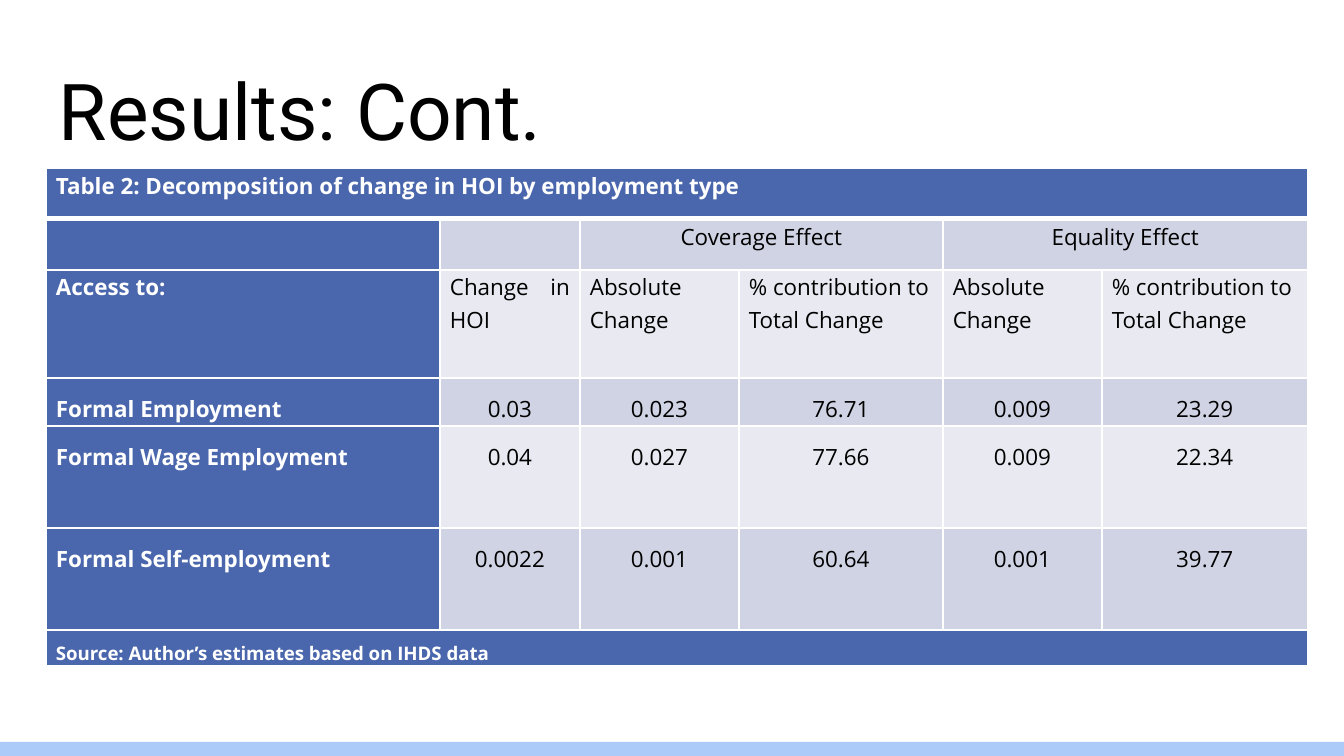
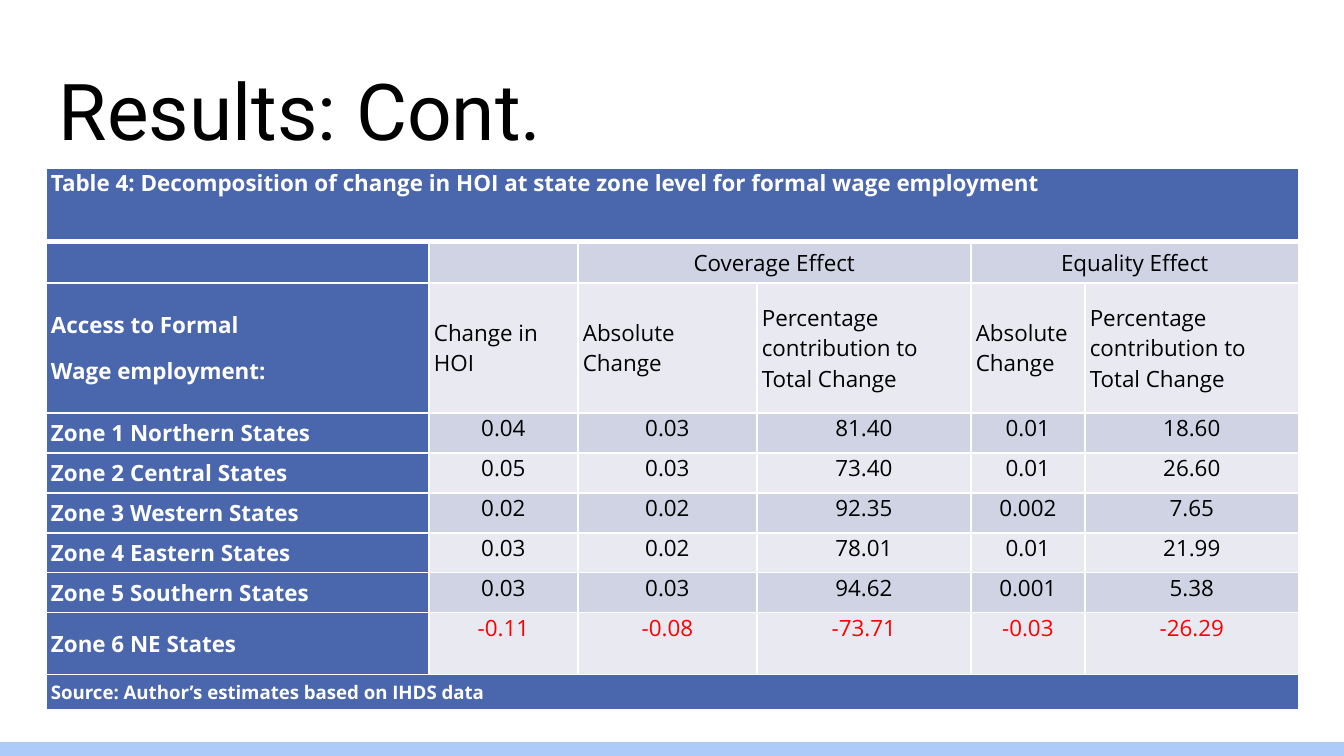
from dataclasses import dataclass

import lxml.etree
import pptx
import pptx.dml.color
import pptx.enum.shapes
import pptx.enum.text
import pptx.oxml.ns
import pptx.presentation
import pptx.slide
import pptx.table
import pptx.text.text
import pptx.util

ALIGN = pptx.enum.text.PP_ALIGN
ANCHOR = pptx.enum.text.MSO_ANCHOR

SLIDE_WIDTH, SLIDE_HEIGHT = 1344, 756
EMU_PER_PX = 9144000 / SLIDE_WIDTH
TABLE_LEFT, TABLE_TOP = 46, 168

BLUE, BAND = "4A66AC", "ACCBF9"
STRIPES = ("D0D3E3", "E9EAF1")
WHITE, BLACK, RED = "FFFFFF", "000000", "FF0000"
TITLE_FONT, TABLE_FONT = "Roboto", "Open Sans"

TITLE = "Results: Cont."
EFFECTS = ("", "", "Coverage Effect", "", "Equality Effect", "")
SOURCE = "Source: Author’s estimates based on IHDS data"


@dataclass(frozen=True)
class Decomposition:
    caption: str
    access: str
    share: str
    records: tuple[tuple[str, ...], ...]
    widths: tuple[int, ...]
    heights: tuple[int, ...]
    side_margin: int
    head_spacing: float
    record_spacing: float
    head_anchor: ANCHOR
    source_anchor: ANCHOR
    justified_heads: int  # leading column heads set justified

    def rows(self) -> list[tuple[str, ...]]:
        blank = ("",) * (len(self.widths) - 1)
        effect_heads = ("Absolute Change", self.share)
        return [
            (self.caption, *blank),
            EFFECTS,
            (self.access, "Change in HOI", *effect_heads * 2),
            *self.records,
            (SOURCE, *blank),
        ]


EMPLOYMENT = Decomposition(
    caption="Table 2: Decomposition of change in HOI by employment type",
    access="Access to:",
    share="% contribution to Total Change",
    records=(
        ("Formal Employment", "0.03", "0.023", "76.71", "0.009", "23.29"),
        ("Formal Wage Employment", "0.04", "0.027", "77.66", "0.009", "22.34"),
        ("Formal Self-employment", "0.0022", "0.001", "60.64", "0.001", "39.77"),
    ),
    widths=(394, 140, 159, 204, 159, 206),
    heights=(51, 51, 108, 48, 102, 102, 36),
    side_margin=10,
    head_spacing=1.07,
    record_spacing=1.5,
    head_anchor=ANCHOR.TOP,
    source_anchor=ANCHOR.BOTTOM,
    justified_heads=2,
)

ZONES = Decomposition(
    caption="Table 4: Decomposition of change in HOI at state zone level "
            "for formal wage employment",
    access="Access to Formal\nWage employment:",
    share="Percentage contribution to Total Change",
    records=(
        ("Zone 1 Northern States", "0.04", "0.03", "81.40", "0.01", "18.60"),
        ("Zone 2 Central States", "0.05", "0.03", "73.40", "0.01", "26.60"),
        ("Zone 3 Western States", "0.02", "0.02", "92.35", "0.002", "7.65"),
        ("Zone 4 Eastern States", "0.03", "0.02", "78.01", "0.01", "21.99"),
        ("Zone 5 Southern States", "0.03", "0.03", "94.62", "0.001", "5.38"),
        ("Zone 6 NE States", "-0.11", "-0.08", "-73.71", "-0.03", "-26.29"),
    ),
    widths=(383, 149, 179, 214, 114, 214),
    heights=(74, 41, 130, *(40,) * 5, 62, 35),
    side_margin=5,
    head_spacing=1.0,
    record_spacing=1.0,
    head_anchor=ANCHOR.MIDDLE,
    source_anchor=ANCHOR.MIDDLE,
    justified_heads=0,
)


def px(length: int) -> pptx.util.Emu:
    return pptx.util.Emu(round(length * EMU_PER_PX))


def color(value: str) -> pptx.dml.color.RGBColor:
    return pptx.dml.color.RGBColor.from_string(value)


def add_run(paragraph: pptx.text.text._Paragraph, text: str, font: str,
            size: int, ink: str, bold: bool = False) -> None:
    run = paragraph.add_run()
    run.text = text
    run.font.name = font
    run.font.size = pptx.util.Pt(size)
    run.font.bold = bold
    run.font.color.rgb = color(ink)


def add_band(slide: pptx.slide.Slide) -> None:
    height = 14
    band = slide.shapes.add_shape(
        pptx.enum.shapes.MSO_SHAPE.RECTANGLE,
        0, px(SLIDE_HEIGHT - height), px(SLIDE_WIDTH), px(height))
    band.shadow.inherit = False
    band.fill.solid()
    band.fill.fore_color.rgb = color(BAND)
    band.line.fill.background()


def set_title(slide: pptx.slide.Slide) -> None:
    title = slide.shapes.title
    title.left, title.top = px(TABLE_LEFT), px(47)
    title.width, title.height = px(1253), px(122)
    frame = title.text_frame
    frame.auto_size = pptx.enum.text.MSO_AUTO_SIZE.NONE
    frame.vertical_anchor = ANCHOR.BOTTOM
    frame.margin_left = frame.margin_right = px(13)
    frame.margin_top = frame.margin_bottom = px(13)
    paragraph = frame.paragraphs[0]
    paragraph.alignment = ALIGN.LEFT
    add_run(paragraph, TITLE, TITLE_FONT, 42, BLACK)


def add_borders(cell: pptx.table._Cell, top: int, bottom: int) -> None:
    """Draw white borders; must run before the cell gets its fill."""
    properties = cell._tc.get_or_add_tcPr()
    for side, points in (("L", 1), ("R", 1), ("T", top), ("B", bottom)):
        line = lxml.etree.SubElement(
            properties, pptx.oxml.ns.qn(f"a:ln{side}"), w=str(pptx.util.Pt(points)))
        fill = lxml.etree.SubElement(line, pptx.oxml.ns.qn("a:solidFill"))
        lxml.etree.SubElement(fill, pptx.oxml.ns.qn("a:srgbClr"), val=WHITE)


def write_cell(cell: pptx.table._Cell, text: str, size: int, ink: str, bold: bool,
               alignment: ALIGN, spacing: float) -> None:
    frame = cell.text_frame
    if not text:
        # An empty cell would otherwise stretch its row to the default size.
        lxml.etree.SubElement(frame.paragraphs[0]._p,
                              pptx.oxml.ns.qn("a:endParaRPr"), sz=str(size * 100))
        return
    for number, line in enumerate(text.split("\n")):
        paragraph = frame.add_paragraph() if number else frame.paragraphs[0]
        paragraph.alignment = alignment
        paragraph.line_spacing = spacing
        paragraph.space_after = pptx.util.Pt(8)
        add_run(paragraph, line, TABLE_FONT, size, ink, bold)


def add_decomposition(slide: pptx.slide.Slide, data: Decomposition) -> None:
    rows = data.rows()
    last = len(rows) - 1
    grid = slide.shapes.add_table(
        len(rows), len(data.widths), px(TABLE_LEFT), px(TABLE_TOP),
        px(sum(data.widths)), px(sum(data.heights))).table
    grid.first_row = grid.horz_banding = False
    for column, width in zip(grid.columns, data.widths):
        column.width = px(width)
    for row, height in zip(grid.rows, data.heights):
        row.height = px(height)

    for r, texts in enumerate(rows):
        is_record = 2 < r < last
        for c, text in enumerate(texts):
            cell = grid.cell(r, c)
            is_blue = c == 0 or r in (0, last)
            add_borders(cell, 3 if r == 1 else 1, 3 if r == 0 else 1)
            cell.fill.solid()
            cell.fill.fore_color.rgb = color(BLUE if is_blue else STRIPES[(r - 1) % 2])
            cell.margin_left = cell.margin_right = px(data.side_margin)
            cell.margin_top = cell.margin_bottom = 0

            if r == last:
                cell.vertical_anchor = data.source_anchor
            elif r == 0 or (is_record and c):
                cell.vertical_anchor = ANCHOR.TOP
            else:
                cell.vertical_anchor = data.head_anchor

            if c and r != 2:
                alignment = ALIGN.CENTER
            elif 0 < c <= data.justified_heads:
                alignment = ALIGN.JUSTIFY
            else:
                alignment = ALIGN.LEFT

            ink = WHITE if is_blue else RED if text.startswith("-") else BLACK
            write_cell(cell, text, 10 if r == last else 12, ink, is_blue, alignment,
                       data.record_spacing if is_record else data.head_spacing)

    for r, first, final in ((0, 0, 5), (1, 2, 3), (1, 4, 5), (last, 0, 5)):
        grid.cell(r, first).merge(grid.cell(r, final))


def add_results(deck: pptx.presentation.Presentation, data: Decomposition) -> None:
    slide = deck.slides.add_slide(deck.slide_layouts.get_by_name("Title Only"))
    add_band(slide)
    set_title(slide)
    add_decomposition(slide, data)


def main() -> None:
    deck = pptx.Presentation()
    deck.slide_width, deck.slide_height = px(SLIDE_WIDTH), px(SLIDE_HEIGHT)
    for data in (EMPLOYMENT, ZONES):
        add_results(deck, data)
    deck.save("out.pptx")


if __name__ == "__main__":
    main()
